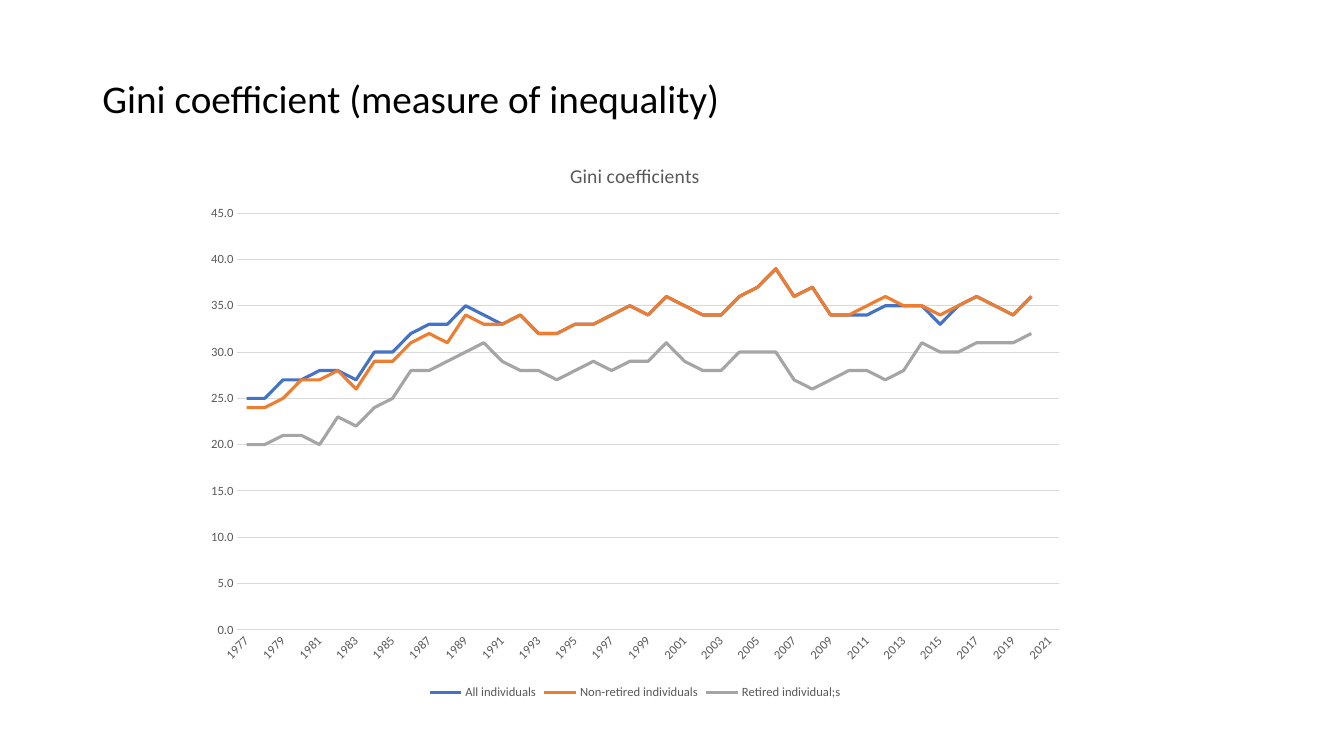
from pptx import Presentation
from pptx.chart.data import CategoryChartData
from pptx.dml.color import RGBColor
from pptx.enum.chart import XL_CHART_TYPE, XL_LEGEND_POSITION, XL_MARKER_STYLE, XL_TICK_MARK
from pptx.enum.text import MSO_ANCHOR, PP_ALIGN
from pptx.util import Pt

LINE_CHART = XL_CHART_TYPE.LINE
LEGEND_BOTTOM = XL_LEGEND_POSITION.BOTTOM
NO_MARKER = XL_MARKER_STYLE.NONE
NO_TICK = XL_TICK_MARK.NONE
MIDDLE = MSO_ANCHOR.MIDDLE
LEFT = PP_ALIGN.LEFT

YEARS = range(1977, 2022)
GINI_SERIES = [
    ("All individuals", "4472C4", [
        25, 25, 27, 27, 28, 28, 27, 30, 30, 32, 33, 33, 35, 34, 33,
        34, 32, 32, 33, 33, 34, 35, 34, 36, 35, 34, 34, 36, 37, 39,
        36, 37, 34, 34, 34, 35, 35, 35, 33, 35, 36, 35, 34, 36]),
    ("Non-retired individuals", "ED7D31", [
        24, 24, 25, 27, 27, 28, 26, 29, 29, 31, 32, 31, 34, 33, 33,
        34, 32, 32, 33, 33, 34, 35, 34, 36, 35, 34, 34, 36, 37, 39,
        36, 37, 34, 34, 35, 36, 35, 35, 34, 35, 36, 35, 34, 36]),
    ("Retired individual;s", "A5A5A5", [
        20, 20, 21, 21, 20, 23, 22, 24, 25, 28, 28, 29, 30, 31, 29,
        28, 28, 27, 28, 29, 28, 29, 29, 31, 29, 28, 28, 30, 30, 30,
        27, 26, 27, 28, 28, 27, 28, 31, 30, 30, 31, 31, 31, 32]),
]


def color(hex_string):
    return RGBColor.from_string(hex_string)


def apply(target, values):
    for name, value in values.items():
        setattr(target, name, value)


class SlideBuilder:
    """Holds the style and the current slide, and adds its elements."""

    font_name = "Calibri"
    gray = "595959"
    grid = "D9D9D9"

    def __init__(self, presentation):
        self.slide = presentation.slides.add_slide(presentation.slide_layouts[5])

    def style_font(self, font, size, hex_string):
        apply(font, {"name": self.font_name, "size": Pt(size), "bold": False})
        font.color.rgb = color(hex_string)

    def style_line(self, line, width, hex_string):
        line.width = Pt(width)
        line.color.rgb = color(hex_string)

    def title(self, text, left, top, width, height):
        title = self.slide.shapes.title
        apply(title, {"left": Pt(left), "top": Pt(top),
                      "width": Pt(width), "height": Pt(height)})
        apply(title.text_frame, {"text": text, "vertical_anchor": MIDDLE, "word_wrap": True})
        paragraph = title.text_frame.paragraphs[0]
        apply(paragraph, {"alignment": LEFT, "line_spacing": 0.9})
        self.style_font(paragraph.runs[0].font, 28, "000000")

    def line_chart(self, title, categories, series_rows, left, top, width, height):
        data = CategoryChartData(number_format="0.0")
        data.categories = [str(category) for category in categories]
        for name, _, values in series_rows:
            data.add_series(name, values)
        chart = self.slide.shapes.add_chart(
            LINE_CHART, Pt(left), Pt(top), Pt(width), Pt(height), data).chart
        self.style_font(chart.font, 10, "000000")

        apply(chart, {"has_title": True, "has_legend": True})
        chart.chart_title.include_in_layout = False
        chart.chart_title.text_frame.text = title
        run = chart.chart_title.text_frame.paragraphs[0].runs[0]
        self.style_font(run.font, 14, self.gray)
        apply(chart.legend, {"position": LEGEND_BOTTOM, "include_in_layout": False})
        self.style_font(chart.legend.font, 9, self.gray)

        for series, (_, hex_string, _) in zip(chart.plots[0].series, series_rows):
            series.smooth = False
            series.marker.style = NO_MARKER
            self.style_line(series.format.line, 2.25, hex_string)
        chart.plots[0].vary_by_categories = False
        self.axes(chart.category_axis, chart.value_axis)

    def axes(self, category_axis, value_axis):
        for axis in (category_axis, value_axis):
            apply(axis, {"major_tick_mark": NO_TICK, "minor_tick_mark": NO_TICK})
            self.style_font(axis.tick_labels.font, 9, self.gray)
        self.style_line(category_axis.format.line, 0.75, self.grid)
        category_axis._element.xpath("c:txPr/a:bodyPr")[0].set("rot", "-2700000")
        apply(value_axis, {"minimum_scale": 0, "maximum_scale": 45,
                           "major_unit": 5, "has_major_gridlines": True})
        apply(value_axis.tick_labels, {"number_format": "0.0",
                                       "number_format_is_linked": False})
        value_axis.format.line.fill.background()
        self.style_line(value_axis.major_gridlines.format.line, 0.75, self.grid)


def main():
    presentation = Presentation()
    apply(presentation, {"slide_width": Pt(960), "slide_height": Pt(540)})
    builder = SlideBuilder(presentation)
    builder.title("Gini coefficient (measure of inequality)", 66, 28.75, 828, 86.4)
    builder.line_chart("Gini coefficients", YEARS, GINI_SERIES, 138.2, 101.5, 630.7, 401)
    presentation.save("out.pptx")


if __name__ == "__main__":
    main()
